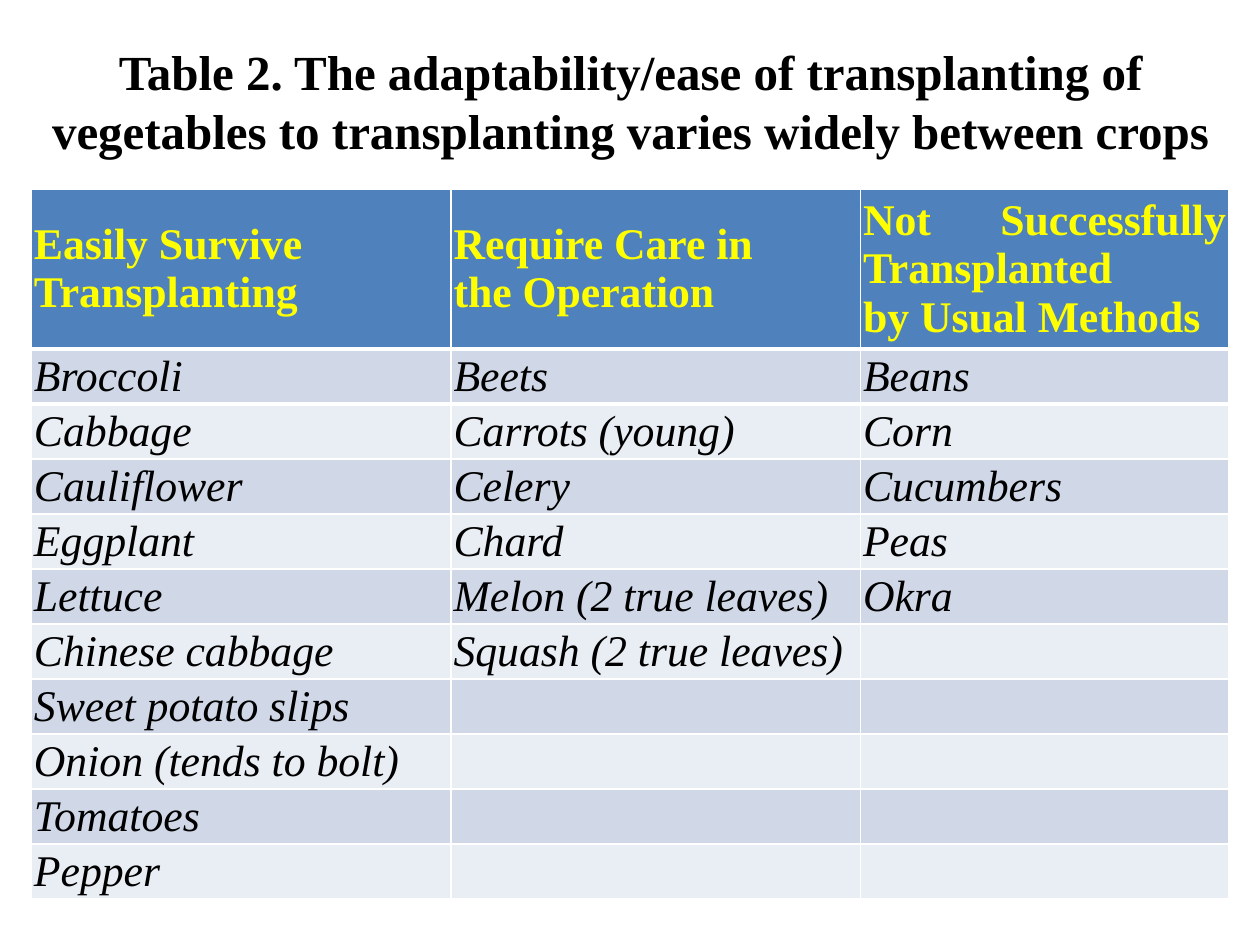
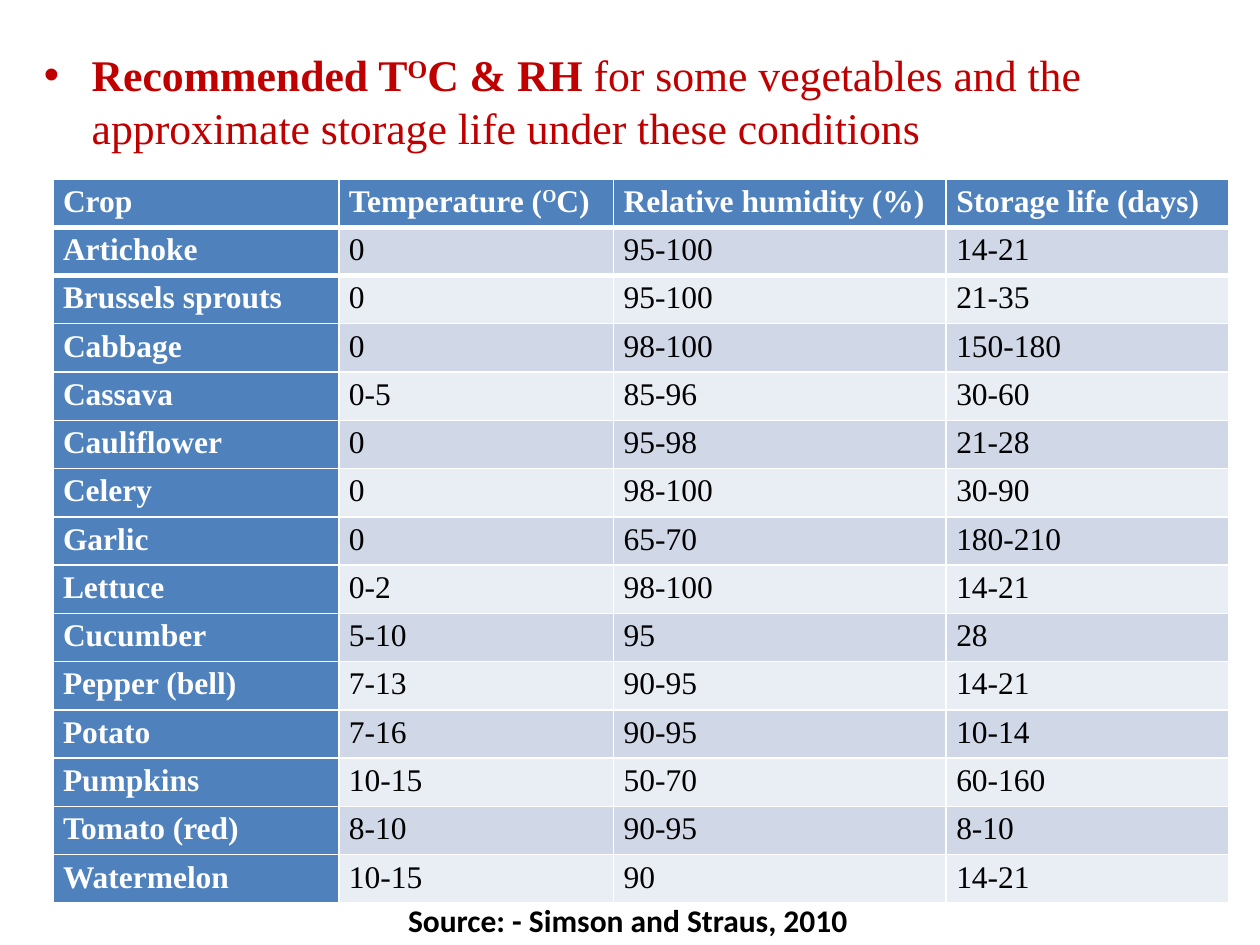
import pptx
import pptx.util
import pptx.dml.color
import pptx.enum.text
from pptx.util import Inches

SERIF, SANS = "Times New Roman", "Calibri"
BLACK, WHITE, RED, YELLOW = "000000", "FFFFFF", "C00000", "FFFF00"
BLUE, BANDS = "4F81BD", ("D0D8E8", "E9EDF4")
ALIGN = pptx.enum.text.PP_ALIGN
ANCHOR = pptx.enum.text.MSO_ANCHOR
XMLNS = 'xmlns:a="http://schemas.openxmlformats.org/drawingml/2006/main"'

# A pair of ^ marks encloses superscript text.
TITLE = ("Table 2. The adaptability/ease of transplanting of "
         "vegetables to transplanting varies widely between crops")
GROUPS = [
    ("Easily Survive\nTransplanting",
     ["Broccoli", "Cabbage", "Cauliflower", "Eggplant", "Lettuce",
      "Chinese cabbage", "Sweet potato slips", "Onion (tends to bolt)",
      "Tomatoes", "Pepper"]),
    ("Require Care in\nthe Operation",
     ["Beets", "Carrots (young)", "Celery", "Chard",
      "Melon (2 true leaves)", "Squash (2 true leaves)"]),
    ("Not Successfully Transplanted\nby Usual Methods",
     ["Beans", "Corn", "Cucumbers", "Peas", "Okra"]),
]

LEAD = "Recommended T^O^C & RH "
REST = "for some vegetables and the approximate storage life under these conditions"
STORAGE = [
    ("Crop", "Temperature (^O^C)", "Relative humidity (%)", "Storage life (days)"),
    ("Artichoke", "0", "95-100", "14-21"),
    ("Brussels sprouts", "0", "95-100", "21-35"),
    ("Cabbage", "0", "98-100", "150-180"),
    ("Cassava", "0-5", "85-96", "30-60"),
    ("Cauliflower", "0", "95-98", "21-28"),
    ("Celery", "0", "98-100", "30-90"),
    ("Garlic", "0", "65-70", "180-210"),
    ("Lettuce", "0-2", "98-100", "14-21"),
    ("Cucumber", "5-10", "95", "28"),
    ("Pepper (bell)", "7-13", "90-95", "14-21"),
    ("Potato", "7-16", "90-95", "10-14"),
    ("Pumpkins", "10-15", "50-70", "60-160"),
    ("Tomato (red)", "8-10", "90-95", "8-10"),
    ("Watermelon", "10-15", "90", "14-21"),
]
SOURCE = "Source: - Simson and Straus, 2010"


def color(code):
    return pptx.dml.color.RGBColor.from_string(code)


def style(para, size, code, bold=None, italic=None, face=SERIF):
    font = para.font
    font.name, font.size = face, pptx.util.Pt(size)
    font.bold, font.italic = bold, italic
    font.color.rgb = color(code)


def write(para, text, bold=None):
    """Add runs, raising the parts between ^ marks."""
    for i, part in enumerate(text.split("^")):
        run = para.add_run()
        run.text = part
        if bold is not None:
            run.font.bold = bold
        if i % 2:
            run._r.get_or_add_rPr().set("baseline", "30000")


def add_box(slide, *place):
    frame = slide.shapes.add_textbox(*map(Inches, place)).text_frame
    frame.word_wrap = True
    return frame


def rule(cell, side, points):
    """Draw a white border on one side of a cell."""
    line = pptx.oxml.parse_xml(
        f'<a:{side} {XMLNS} w="{pptx.util.Pt(points)}"><a:solidFill>'
        f'<a:srgbClr val="{WHITE}"/></a:solidFill></a:{side}>')
    cell._tc.get_or_add_tcPr().insert(0, line)


def add_grid(slide, rows, left, top, widths, heights, look):
    """Add a banded table; look(row, col) gives fill and font settings."""
    shape = slide.shapes.add_table(
        len(rows), len(widths), Inches(left), Inches(top),
        Inches(sum(widths)), Inches(sum(heights)))
    grid = shape.table
    for col, width in zip(grid.columns, widths):
        col.width = Inches(width)
    for line, height in zip(grid.rows, heights):
        line.height = Inches(height)
    for r, row in enumerate(rows):
        for c, text in enumerate(row):
            cell = grid.cell(r, c)
            fill, font = look(r, c)
            cell.fill.solid()
            cell.fill.fore_color.rgb = color(fill)
            if r < 2:
                rule(cell, "lnT" if r else "lnB", 3)
            for i, part in enumerate(text.split("\n")):
                frame = cell.text_frame
                para = frame.add_paragraph() if i else frame.paragraphs[0]
                para.alignment = ALIGN.JUSTIFY
                style(para, **font)
                if part:
                    write(para, part)
    return grid


def pad(grid, left, top, right, bottom):
    for cell in grid.iter_cells():
        cell.margin_left, cell.margin_right = Inches(left), Inches(right)
        cell.margin_top, cell.margin_bottom = Inches(top), Inches(bottom)


def crop_look(r, c):
    if r == 0:
        return BLUE, dict(size=25, code=YELLOW, bold=True)
    return BANDS[(r - 1) % 2], dict(size=25, code=BLACK, italic=True)


def store_look(r, c):
    if r == 0 or c == 0:
        return BLUE, dict(size=18, code=WHITE, bold=True)
    return BANDS[(r - 1) % 2], dict(size=18, code=BLACK)


def crops(slide):
    frame = add_box(slide, 0.17, 0.17, 9.67, 1.25)
    frame.vertical_anchor = ANCHOR.MIDDLE
    para = frame.paragraphs[0]
    para.alignment = ALIGN.CENTER
    style(para, 28, BLACK, True)
    write(para, TITLE)

    count = max(len(names) for _, names in GROUPS)
    rows = [[head for head, _ in GROUPS]]
    rows += [[names[i] if i < len(names) else "" for _, names in GROUPS]
             for i in range(count)]
    head, total = 1.18, 5.43
    grid = add_grid(slide, rows, 0.25, 1.5, (3.33, 3.25, 2.92),
                    [head] + [(total - head) / count] * count, crop_look)
    pad(grid, 0.02, 0.01, 0.02, 0.01)
    for cell in grid.iter_cells():
        cell.vertical_anchor = ANCHOR.MIDDLE


def storage(slide):
    para = add_box(slide, 0.25, 0.33, 9.5, 6.28).paragraphs[0]
    para.space_before = pptx.util.Pt(5)
    style(para, 25, RED)
    write(para, LEAD, True)
    write(para, REST, False)
    props = para._p.get_or_add_pPr()
    props.set("marL", str(Inches(0.38)))
    props.set("indent", str(-Inches(0.38)))
    fonts = props.find(pptx.oxml.ns.qn("a:defRPr"))
    for mark in ('buFont {} typeface="Arial"', 'buChar {} char="•"'):
        fonts.addprevious(pptx.oxml.parse_xml(f"<a:{mark.format(XMLNS)}/>"))

    grid = add_grid(slide, STORAGE, 0.42, 1.42, (2.27, 2.18, 2.64, 2.24),
                    [5.75 / len(STORAGE)] * len(STORAGE), store_look)
    grid.first_col = True
    pad(grid, 0.08, 0, 0.07, 0)
    for cell in grid.iter_cells():
        cell.text_frame.paragraphs[0].line_spacing = 1.15

    note = add_box(slide, 3.14, 7.1, 3.72, 0.4)
    note.word_wrap = False
    style(note.paragraphs[0], 18, BLACK, True, face=SANS)
    write(note.paragraphs[0], SOURCE)


def main():
    deck = pptx.Presentation()
    deck.slide_width, deck.slide_height = Inches(10), Inches(7.5)
    for build in (crops, storage):
        build(deck.slides.add_slide(deck.slide_layouts[6]))
    deck.save("out.pptx")


if __name__ == "__main__":
    main()
